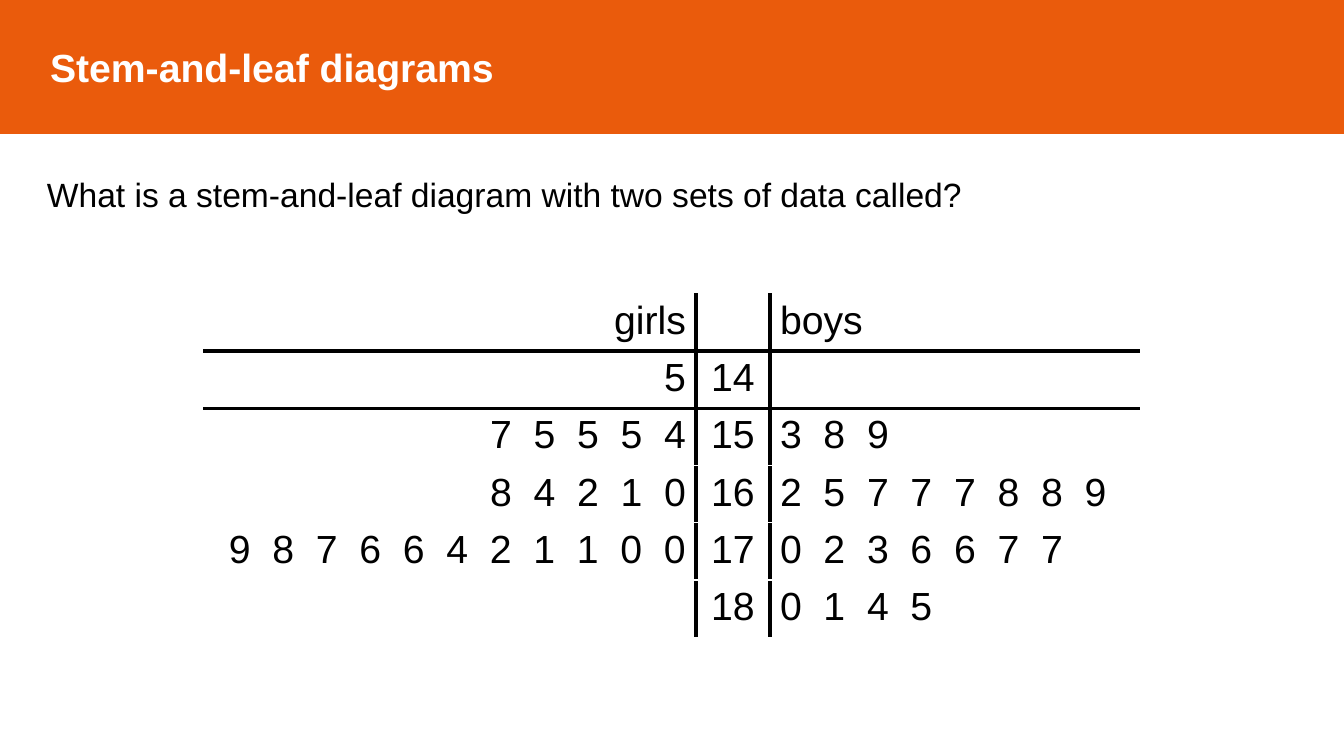
from dataclasses import dataclass

from lxml import etree
from pptx import Presentation
from pptx.dml.color import RGBColor
from pptx.enum.text import MSO_ANCHOR, MSO_AUTO_SIZE, PP_ALIGN
from pptx.oxml.ns import qn
from pptx.util import Emu, Pt

LEFT, MID, RIGHT = PP_ALIGN.LEFT, PP_ALIGN.CENTER, PP_ALIGN.RIGHT
MIDDLE = MSO_ANCHOR.MIDDLE
FIXED = MSO_AUTO_SIZE.NONE
TITLE_ONLY = 5


@dataclass(frozen=True)
class Theme:
    font: str = "Arial"
    band: str = "EA5B0C"
    ink: str = "000000"
    paper: str = "FFFFFF"
    large: int = 28
    body: int = 24
    thick: int = 3
    thin: int = 1


def px(count):
    """Turn pixels, at 100.8 to the inch, into EMU."""
    return Emu(round(count * 914400 / 100.8))


def apply(target, values):
    for name, value in values.items():
        setattr(target, name, value)


class Deck:
    def __init__(self, theme):
        self.theme = theme
        self.prs = Presentation()
        apply(self.prs, {"slide_width": px(1344), "slide_height": px(756)})
        layout = self.prs.slide_layouts[TITLE_ONLY]
        self.slide = self.prs.slides.add_slide(layout)

    def label(self, frame, text, size, color, align=LEFT, bold=False):
        para = frame.paragraphs[0]
        para.alignment = align
        run = para.add_run()
        run.text = text
        apply(run.font, {"name": self.theme.font, "size": Pt(size), "bold": bold})
        run.font.color.rgb = RGBColor.from_string(color)

    def title(self, text, left, top, width, height, inset):
        shape = self.slide.shapes.title
        apply(shape, {"left": px(left), "top": px(top),
                      "width": px(width), "height": px(height)})
        band = RGBColor.from_string(self.theme.band)
        for fill in (shape.fill, shape.line.fill):
            fill.solid()
            fill.fore_color.rgb = band
        shape.line.width = Pt(self.theme.thin)
        frame = shape.text_frame
        apply(frame, {"auto_size": FIXED, "vertical_anchor": MIDDLE,
                      "margin_left": px(inset), "word_wrap": True})
        self.label(frame, text, self.theme.large, self.theme.paper, bold=True)

    def text(self, text, left, top, width, height):
        box = self.slide.shapes.add_textbox(px(left), px(top), px(width), px(height))
        box.text_frame.word_wrap = True
        self.label(box.text_frame, text, self.theme.body, self.theme.ink)

    def edge(self, cell, sides):
        """Draw the borders of a cell; sides maps each tag to whether it is a rule."""
        props = cell._tc.get_or_add_tcPr()
        for place, (tag, rule) in enumerate(sides.items()):
            width = self.theme.thick if rule else self.theme.thin
            line = etree.Element(qn(f"a:{tag}"), w=str(Pt(width)))
            fill = etree.SubElement(line, qn("a:solidFill"))
            color = self.theme.ink if rule else self.theme.paper
            etree.SubElement(fill, qn("a:srgbClr"), val=color)
            props.insert(place, line)

    def table(self, rows, left, top, widths, height, aligns, ruled):
        """Add a table with inner upright rules and a rule below each ruled row."""
        frame = self.slide.shapes.add_table(
            len(rows), len(widths), px(left), px(top),
            px(sum(widths)), px(height * len(rows)))
        grid = frame.table
        apply(grid, {"first_row": False, "horz_banding": False})
        for col, width in zip(grid.columns, widths):
            col.width = px(width)
        last = len(widths) - 1
        for r, row in enumerate(rows):
            grid.rows[r].height = px(height)
            for c, text in enumerate(row):
                cell = grid.cell(r, c)
                cell.fill.background()
                self.edge(cell, {"lnL": c > 0, "lnR": c < last,
                                 "lnT": r - 1 in ruled, "lnB": r in ruled})
                if text:
                    self.label(cell.text_frame, text, self.theme.large,
                               self.theme.ink, aligns[c])


def leaves(digits):
    return "  ".join(digits)


def main():
    deck = Deck(Theme())
    deck.title("Stem-and-leaf diagrams", 0, 0, 1344, 133, inset=50)
    deck.text("What is a stem-and-leaf diagram with two sets of data called?",
              37, 169, 1270, 50)
    plot = [
        ("5", 14, ""),
        ("75554", 15, "389"),
        ("84210", 16, "25777889"),
        ("98766421100", 17, "0236677"),
        ("", 18, "0145"),
    ]
    rows = [("girls", "", "boys")]
    rows += [(leaves(girls), str(stem), leaves(boys)) for girls, stem, boys in plot]
    deck.table(rows, 204, 294, (492, 74, 370), 57, (RIGHT, MID, LEFT), ruled=(0, 1))
    deck.prs.save("out.pptx")


if __name__ == "__main__":
    main()
